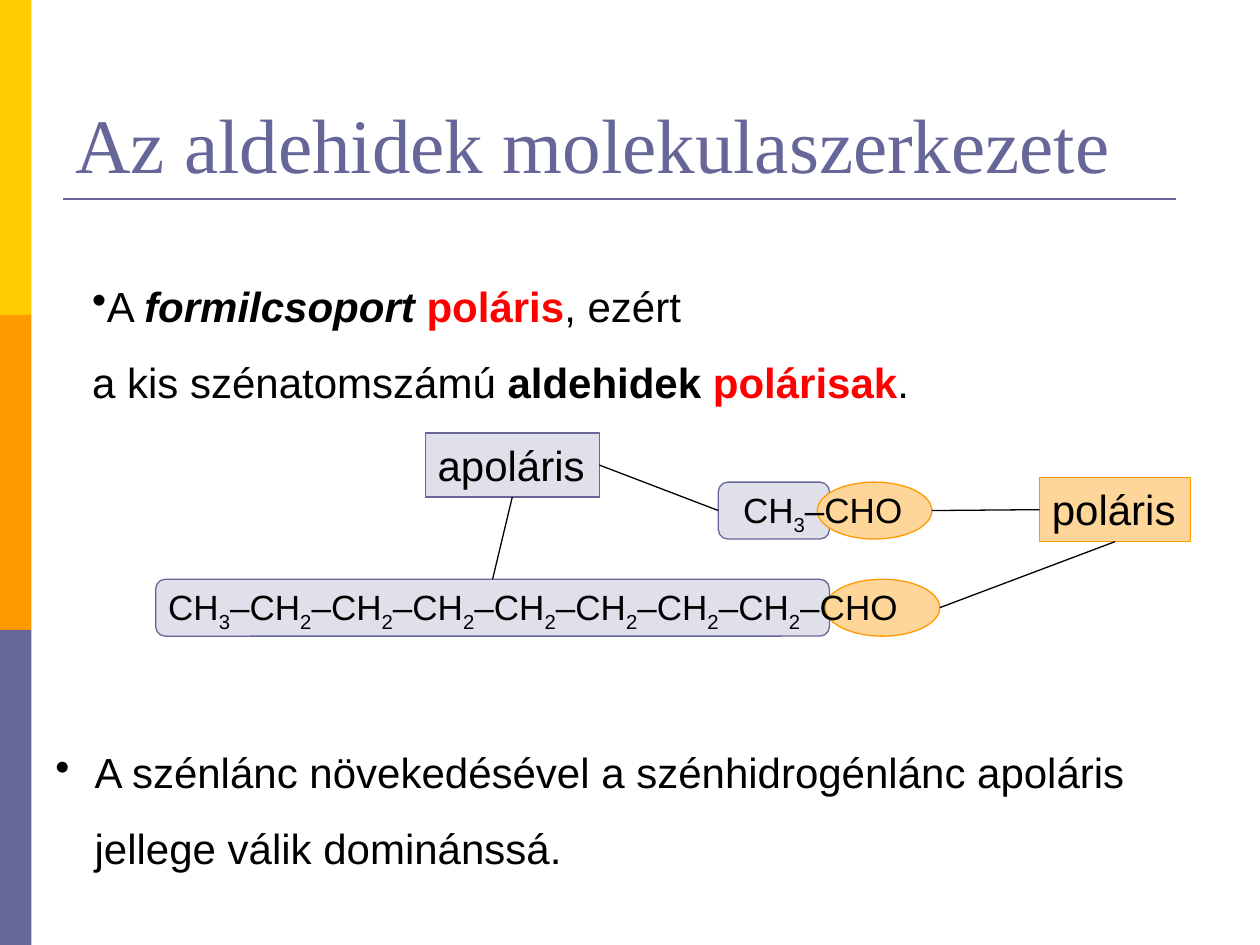
from dataclasses import dataclass
from itertools import groupby

from lxml import etree
from pptx import Presentation
from pptx.dml.color import RGBColor
from pptx.enum import shapes, text
from pptx.oxml import ns
from pptx.util import Pt


@dataclass(frozen=True)
class Theme:
    yellow: str = "FFCC00"
    orange: str = "FF9900"
    violet: str = "666699"
    pale_orange: str = "FFD699"
    pale_violet: str = "E0E0EB"
    black: str = "000000"
    red: str = "FF0000"
    title_font: str = "Times New Roman"
    body_font: str = "Arial"
    title_size: int = 44
    body_size: int = 24
    formula_size: int = 20
    thin: float = 0.75
    rule: float = 1.5


THEME = Theme()
SHAPE = shapes.MSO_SHAPE
TOP, LEFT, BOTTOM, RIGHT = range(4)


def points(*lengths):
    return [Pt(length) for length in lengths]


def add_box(slide, kind, box, fill, line=None):
    shape = slide.shapes.add_shape(kind, *points(*box))
    shape.shadow.inherit = False
    shape.fill.solid()
    shape.fill.fore_color.rgb = RGBColor.from_string(fill)
    if line:
        shape.line.color.rgb = RGBColor.from_string(line)
        shape.line.width = Pt(THEME.thin)
    else:
        shape.line.fill.background()
    return shape


def add_line(slide, start, end, color=THEME.black, width=THEME.thin):
    line = slide.shapes.add_connector(shapes.MSO_CONNECTOR.STRAIGHT, *points(*start, *end))
    line.line.color.rgb = RGBColor.from_string(color)
    line.line.width = Pt(width)
    etree.SubElement(line._element.spPr, ns.qn("a:effectLst"))
    return line


def style(paragraph, size, color=THEME.black, font=THEME.body_font):
    paragraph.alignment = text.PP_ALIGN.LEFT
    paragraph.font.size = Pt(size)
    paragraph.font.name = font
    paragraph.font.color.rgb = RGBColor.from_string(color)


def add_run(paragraph, words, bold=None, italic=None, color=None):
    run = paragraph.add_run()
    run.text = words
    run.font.bold, run.font.italic = bold, italic
    if color:
        run.font.color.rgb = RGBColor.from_string(color)
    return run


def indent(paragraph, margin, first, bullet=False):
    properties = paragraph._p.get_or_add_pPr()
    properties.set("marL", str(Pt(margin)))
    properties.set("indent", str(Pt(first)))
    if bullet:
        mark = etree.Element(ns.qn("a:buChar"), char="•")
        properties.insert_element_before(mark, "a:tabLst", "a:defRPr", "a:extLst")


def add_side_bar(slide, box):
    left, top, width, height = box
    colors = (THEME.yellow, THEME.orange, THEME.violet)
    part = height / len(colors)
    for row, color in enumerate(colors):
        add_box(slide, SHAPE.RECTANGLE, (left, top + row * part, width, part), color)


def add_title(slide, box, words):
    left, top, width, height = box
    frame = slide.shapes.add_textbox(*points(*box)).text_frame
    frame.word_wrap = True
    frame.vertical_anchor = text.MSO_ANCHOR.BOTTOM
    paragraph = frame.paragraphs[0]
    add_run(paragraph, words)
    style(paragraph, THEME.title_size, THEME.violet, THEME.title_font)
    rule_y = top + height + 2.2
    add_line(slide, (left, rule_y), (left + width - 12, rule_y), THEME.violet, THEME.rule)


def add_body(slide, box):
    frame = slide.shapes.add_textbox(*points(*box)).text_frame
    frame.word_wrap = True
    first, second, last = frame.paragraphs[0], frame.add_paragraph(), frame.add_paragraph()
    for paragraph in (first, second, last):
        style(paragraph, THEME.body_size)
        paragraph.line_spacing = 1.5

    add_run(first, "A ")
    add_run(first, "formilcsoport ", bold=True, italic=True)
    add_run(first, "poláris", bold=True, color=THEME.red)
    add_run(first, ", ezért")
    indent(first, 0, 21, bullet=True)

    add_run(second, "a kis szénatomszámú ")
    add_run(second, "aldehidek ", bold=True)
    add_run(second, "polárisak", bold=True, color=THEME.red)
    add_run(second, ".")
    indent(second, 0, 21)

    # The gap leaves room for the molecules
    last.space_before = Pt(180)
    add_run(last, "A szénlánc növekedésével a szénhidrogénlánc apoláris "
                  "jellege válik dominánssá.")
    indent(last, 22.5, -22.5, bullet=True)


def add_molecule(slide, box, formula, chain_width, text_left):
    """Draw the apolar chain, the polar group at its right end and the formula."""
    left, top, width, height = box
    group_width = 65.5
    chain = add_box(slide, SHAPE.ROUNDED_RECTANGLE, (left, top, chain_width, height),
                    THEME.pale_violet, THEME.violet)
    add_box(slide, SHAPE.OVAL, (left + width - group_width, top, group_width, height),
            THEME.pale_orange, THEME.orange)
    frame = slide.shapes.add_textbox(
        *points(text_left, top, left + width - text_left, height)).text_frame
    frame.word_wrap = False
    paragraph = frame.paragraphs[0]
    style(paragraph, THEME.formula_size)
    for is_index, letters in groupby(formula, str.isdigit):
        run = add_run(paragraph, "".join(letters))
        if is_index:
            run._r.get_or_add_rPr().set("baseline", "-25000")
    return chain, (left + width, top + height / 2)


def add_label(slide, box, words, fill, line):
    label = add_box(slide, SHAPE.RECTANGLE, box, fill, line)
    frame = label.text_frame
    frame.word_wrap = False
    frame.vertical_anchor = text.MSO_ANCHOR.TOP
    paragraph = frame.paragraphs[0]
    add_run(paragraph, words)
    style(paragraph, THEME.body_size)
    return label


def add_diagram(slide, box):
    left, top, width, height = box
    long_chain, long_end = add_molecule(
        slide, (left, top + 83.5, 448, 32.5), "CH3" + "–CH2" * 7 + "–CHO", 385, left)
    short_chain, short_end = add_molecule(
        slide, (left + 321.5, top + 28, 122, 32.5), "CH3–CHO", 63.5, left + 328.5)
    polar = add_label(slide, (left + width - 86.5, top + 25.5, 86.5, 36.5), "poláris",
                      THEME.pale_orange, THEME.orange)
    apolar = add_label(slide, (left + 154, top, 99.5, 36.5), "apoláris",
                       THEME.pale_violet, THEME.violet)

    # Labels to the parts they name
    for end, side in ((short_end, LEFT), (long_end, BOTTOM)):
        add_line(slide, end, end).end_connect(polar, side)
    for side, chain, chain_side in ((RIGHT, short_chain, LEFT), (BOTTOM, long_chain, TOP)):
        line = add_line(slide, (left, top), (left, top))
        line.begin_connect(apolar, side)
        line.end_connect(chain, chain_side)


def main():
    presentation = Presentation()
    presentation.slide_width, presentation.slide_height = points(720, 540)
    slide = presentation.slides.add_slide(presentation.slide_layouts[6])
    add_side_bar(slide, (0, 0, 18, 540))
    add_title(slide, (36, 21.5, 648, 90), "Az aldehidek molekulaszerkezete")
    add_body(slide, (24.5, 142.5, 655, 363.5))
    add_diagram(slide, (89, 247.5, 591.5, 116))
    presentation.save("out.pptx")


if __name__ == "__main__":
    main()
